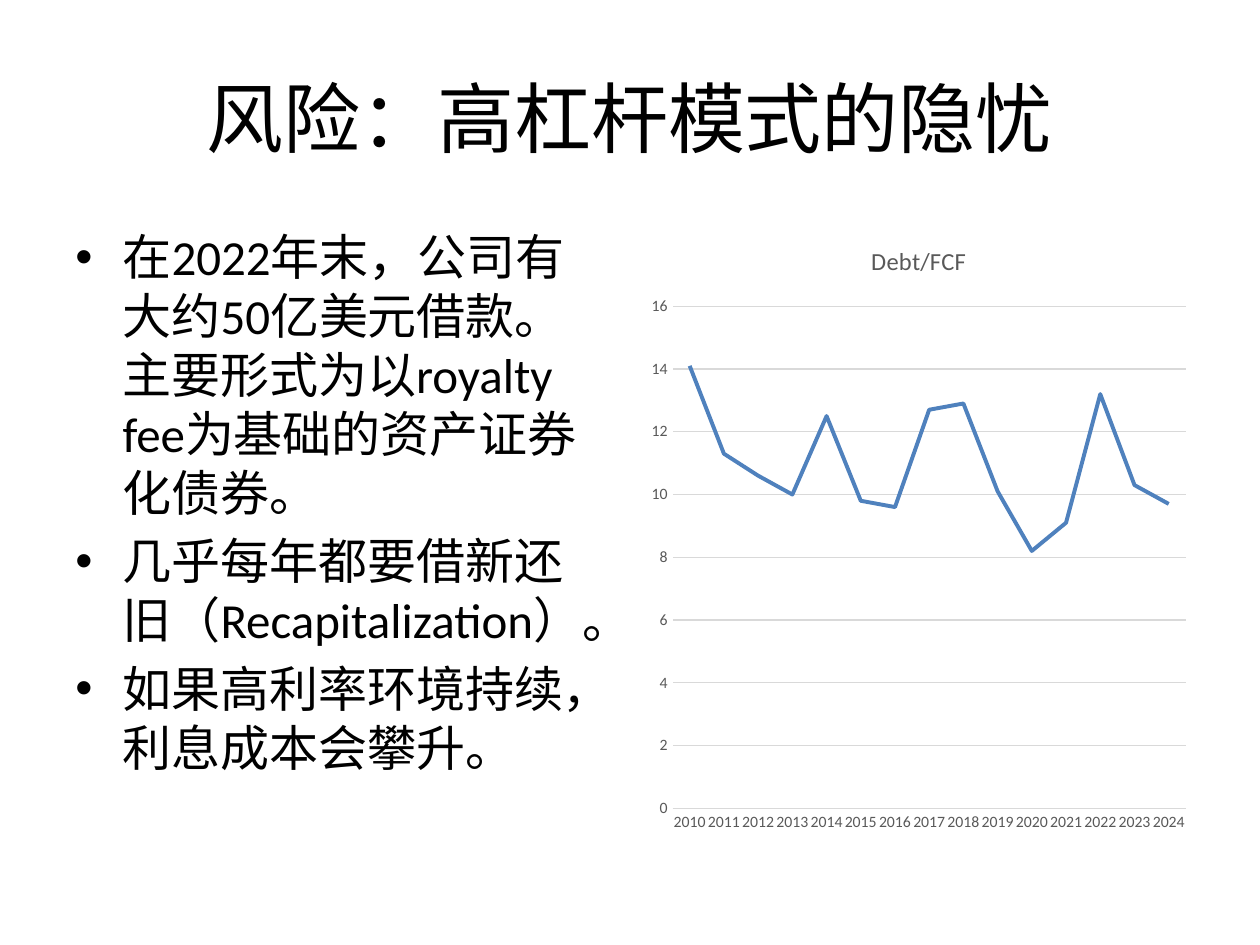
from pptx import Presentation
from pptx.chart.data import CategoryChartData as ChartData
from pptx.dml.color import RGBColor as Rgb
from pptx.enum.chart import XL_CHART_TYPE as Kind, XL_MARKER_STYLE as Marker, XL_TICK_MARK as Tick
from pptx.enum.text import MSO_ANCHOR as Anchor, PP_ALIGN as Align
from pptx.oxml.ns import qn
from pptx.util import Pt
from lxml.etree import SubElement

FACE = "Calibri"
HUES = {"ink": "000000", "soft": "595959", "grid": "D9D9D9", "line": "4F81BD"}
POINTS = [
    "在2022年末，公司有大约50亿美元借款。主要形式为以royalty fee为基础的资产证券化债券。",
    "几乎每年都要借新还旧（Recapitalization）。",
    "如果高利率环境持续，利息成本会攀升。",
]
YEARS = [str(year) for year in range(2010, 2025)]
RATIOS = [14.1, 11.3, 10.6, 10, 12.5, 9.8, 9.6, 12.7, 12.9, 10.1, 8.2, 9.1, 13.2, 10.3, 9.7]


def hue(name):
    return Rgb.from_string(HUES[name])


def style(font, size, name):
    font.name = FACE
    font.size = Pt(size)
    font.bold = False
    font.color.rgb = hue(name)


def stroke(line, name, width):
    line.color.rgb = hue(name)
    line.width = Pt(width)


def add_box(slide, box):
    frame = slide.shapes.add_textbox(*map(Pt, box)).text_frame
    frame.word_wrap = True
    return frame


def add_title(slide, box):
    frame = add_box(slide, box)
    frame.vertical_anchor = Anchor.MIDDLE
    frame.text = "风险：高杠杆模式的隐忧"
    para = frame.paragraphs[0]
    para.alignment = Align.CENTER
    style(para.runs[0].font, 44, "ink")


def add_list(slide, box):
    frame = add_box(slide, box)
    frame.text = "\n".join(POINTS)
    for i, para in enumerate(frame.paragraphs):
        if i:
            para.space_before = Pt(5.6)
        props = para._p.get_or_add_pPr()
        props.set("marL", str(Pt(27)))
        props.set("indent", str(Pt(-27)))
        SubElement(props, qn("a:buFont"), typeface="Arial")
        SubElement(props, qn("a:buChar"), char="•")
        style(para.runs[0].font, 28, "ink")


def add_plot(slide, box):
    data = ChartData()
    data.categories = YEARS
    data.add_series("Debt/FCF", RATIOS)
    chart = slide.shapes.add_chart(Kind.LINE, *map(Pt, box), data).chart
    style(chart.font, 10, "ink")
    chart.has_legend = False
    chart.has_title = True
    title = chart.chart_title
    title.include_in_layout = False
    title.text_frame.text = "Debt/FCF"
    style(title.text_frame.paragraphs[0].runs[0].font, 14, "soft")

    years, scale = chart.category_axis, chart.value_axis
    for axis in (years, scale):
        axis.major_tick_mark = axis.minor_tick_mark = Tick.NONE
        style(axis.tick_labels.font, 9, "soft")
    stroke(years.format.line, "grid", 0.75)
    scale.format.line.fill.background()
    scale.minimum_scale, scale.maximum_scale, scale.major_unit = 0, 16, 2
    scale.has_major_gridlines = True
    stroke(scale.major_gridlines.format.line, "grid", 0.75)

    plot = chart.plots[0]
    plot.vary_by_categories = False
    series = plot.series[0]
    series.smooth = False
    series.marker.style = Marker.NONE
    stroke(series.format.line, "line", 2.25)


def main():
    deck = Presentation()
    deck.slide_width, deck.slide_height = Pt(720), Pt(540)
    slide = deck.slides.add_slide(deck.slide_layouts[6])
    edge, top, wide, high = 36, 126, 318, 356.4
    add_title(slide, (edge, 21.6, 720 - 2 * edge, 90))
    add_list(slide, (edge, top, wide, high))
    add_plot(slide, (720 - edge - wide, top, wide, high))
    deck.save("out.pptx")


if __name__ == "__main__":
    main()
